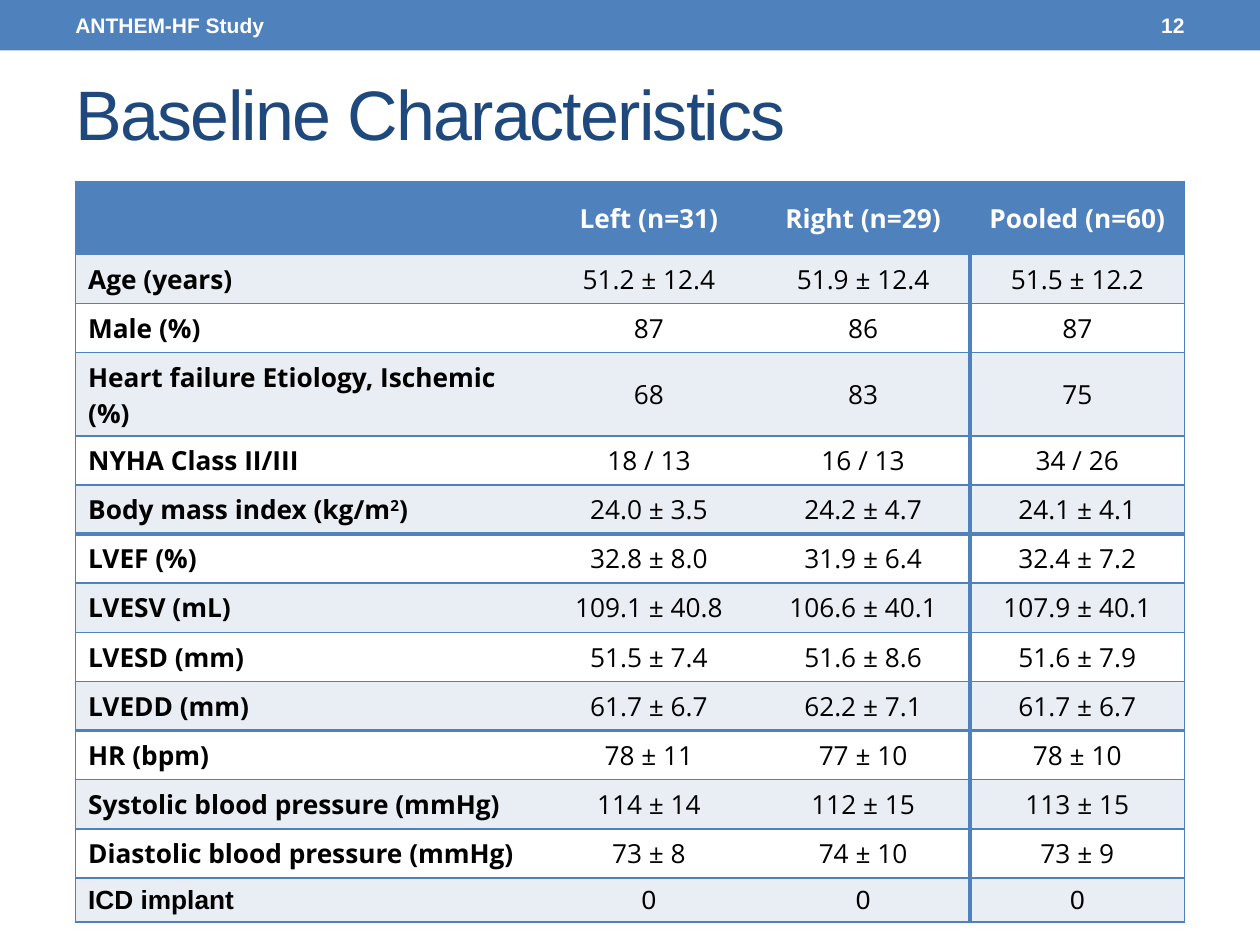
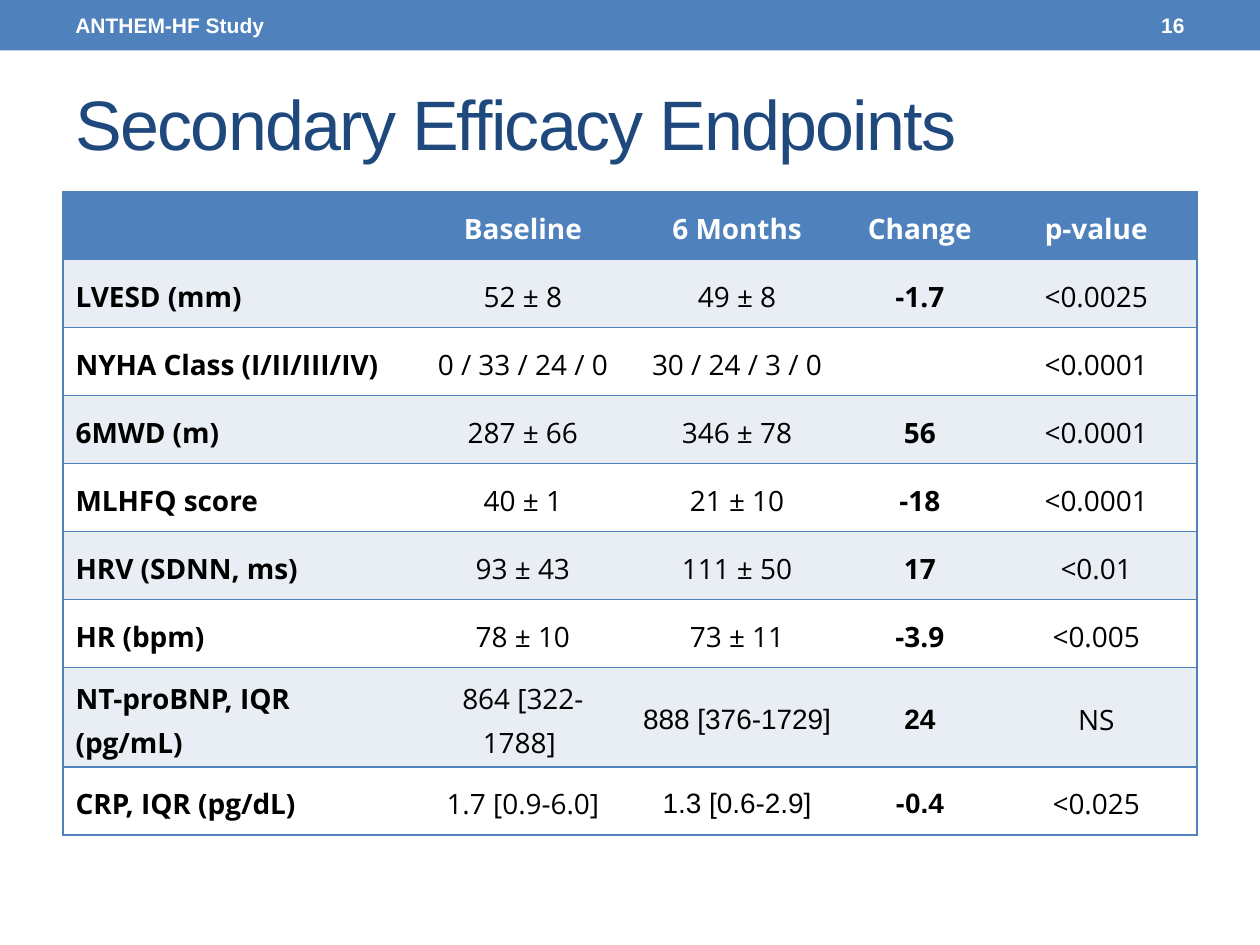
from dataclasses import dataclass

from lxml import etree
from pptx import Presentation
from pptx.dml.color import RGBColor
from pptx.enum import shapes, text
from pptx.oxml import ns
from pptx.util import Inches, Pt


@dataclass(frozen=True)
class Theme:
    blue: str = "4F81BD"
    navy: str = "1F497D"
    stripe: str = "E9EDF4"
    white: str = "FFFFFF"
    black: str = "000000"
    sans: str = "Arial"
    table_font: str = "Open Sans"
    title_size: int = 40
    band_size: int = 12
    thin: float = 1
    thick: float = 2.25


T = Theme()
STUDY = "ANTHEM-HF Study"

SLIDES = [
    dict(
        title="Baseline Characteristics", number=12,
        title_box=(0.5, 0.46, 9, 0.88), table_at=(0.6, 1.44),
        columns=[3.7, 1.7, 1.7, 1.7], row_height=0.39,
        special_heights={0: 0.58, 3: 0.66, 13: 0.33},
        size=15, spacing=None, header_inset=0.15,
        bold_columns={0}, thick_after_column=2, thick_below_rows={5, 9},
        arial_cells={(13, c) for c in range(4)},
        rows=[
            ("", "Left (n=31)", "Right (n=29)", "Pooled (n=60)"),
            ("Age (years)", "51.2 ± 12.4", "51.9 ± 12.4", "51.5 ± 12.2"),
            ("Male (%)", "87", "86", "87"),
            ("Heart failure Etiology, Ischemic (%)", "68", "83", "75"),
            ("NYHA Class II/III", "18 / 13", "16 / 13", "34 / 26"),
            ("Body mass index (kg/m^2^)", "24.0 ± 3.5", "24.2 ± 4.7", "24.1 ± 4.1"),
            ("LVEF (%)", "32.8 ± 8.0", "31.9 ± 6.4", "32.4 ± 7.2"),
            ("LVESV (mL)", "109.1 ± 40.8", "106.6 ± 40.1", "107.9 ± 40.1"),
            ("LVESD (mm)", "51.5 ± 7.4", "51.6 ± 8.6", "51.6 ± 7.9"),
            ("LVEDD (mm)", "61.7 ± 6.7", "62.2 ± 7.1", "61.7 ± 6.7"),
            ("HR (bpm)", "78 ± 11", "77 ± 10", "78 ± 10"),
            ("Systolic blood pressure (mmHg)", "114 ± 14", "112 ± 15", "113 ± 15"),
            ("Diastolic blood pressure (mmHg)", "73 ± 8", "74 ± 10", "73 ± 9"),
            ("ICD implant", "0", "0", "0"),
        ],
    ),
    dict(
        title="Secondary Efficacy Endpoints", number=16,
        title_box=(0.5, 0.54, 9, 0.92), table_at=(0.5, 1.52),
        columns=[2.8, 1.7, 1.7, 1.2, 1.6], row_height=0.54,
        special_heights={7: 0.79},
        size=16, spacing=1.15, header_inset=None,
        bold_columns={0, 3}, thick_after_column=None, thick_below_rows=set(),
        arial_cells={(r, c) for r in (7, 8) for c in (2, 3)},
        rows=[
            ("", "Baseline", "6 Months", "Change", "p-value"),
            ("LVESD (mm)", "52 ± 8", "49 ± 8", "-1.7", "<0.0025"),
            ("NYHA Class (I/II/III/IV)", "0 / 33 / 24 / 0", "30 / 24 / 3 / 0", "", "<0.0001"),
            ("6MWD (m)", "287 ± 66", "346 ± 78", "56", "<0.0001"),
            ("MLHFQ score", "40 ± 1", "21 ± 10", "-18", "<0.0001"),
            ("HRV (SDNN, ms)", "93 ± 43", "111 ± 50", "17", "<0.01"),
            ("HR (bpm)", "78 ± 10", "73 ± 11", "-3.9", "<0.005"),
            ("NT-proBNP, IQR (pg/mL)", "864 [322-1788] ", "888 [376-1729]", "24", "NS"),
            ("CRP, IQR (pg/dL)", "1.7 [0.9-6.0]", "1.3 [0.6-2.9]", "-0.4", "<0.025"),
        ],
    ),
]


def inches(values):
    return [Inches(v) for v in values]


def rgb(color):
    return RGBColor.from_string(color)


def style(p, size, color, font=T.sans, bold=False, align=text.PP_ALIGN.LEFT):
    p.alignment = align
    p.font.name, p.font.size, p.font.bold = font, Pt(size), bold
    p.font.color.rgb = rgb(color)


def add_band(slide):
    sp = slide.shapes.add_shape(shapes.MSO_SHAPE.RECTANGLE, *inches((0, 0, 10, 0.4)))
    sp.shadow.inherit = False
    sp.fill.solid()
    sp.fill.fore_color.rgb = rgb(T.blue)
    sp.line.fill.background()


def add_band_text(slide, content, left, width, align):
    tf = slide.shapes.add_textbox(*inches((left, 0.02, width, 0.36))).text_frame
    tf.word_wrap = True
    tf.vertical_anchor = text.MSO_ANCHOR.MIDDLE
    p = tf.paragraphs[0]
    p.text = content
    style(p, T.band_size, T.white, bold=True, align=align)


def set_title(slide, content, box):
    sp = slide.shapes.title
    sp.left, sp.top, sp.width, sp.height = inches(box)
    tf = sp.text_frame
    tf.auto_size = text.MSO_AUTO_SIZE.NONE
    tf.vertical_anchor = text.MSO_ANCHOR.TOP
    tf.margin_top = Inches(0.1)
    p = tf.paragraphs[0]
    p.text = content
    style(p, T.title_size, T.navy)
    p.runs[0]._r.get_or_add_rPr().set("spc", "-100")


def set_borders(cell, widths):
    tc_pr = cell._tc.get_or_add_tcPr()
    for i, (side, width) in enumerate(widths.items()):
        ln = etree.Element(ns.qn(f"a:ln{side}"), w=str(Pt(width)))
        if width:
            fill = etree.SubElement(ln, ns.qn("a:solidFill"))
            etree.SubElement(fill, ns.qn("a:srgbClr"), val=T.blue)
        else:
            etree.SubElement(ln, ns.qn("a:noFill"))
        tc_pr.insert(i, ln)


def fill_cell(cell, content, r, c, data):
    header = r == 0
    cell.vertical_anchor = text.MSO_ANCHOR.MIDDLE
    cell.fill.solid()
    cell.fill.fore_color.rgb = rgb(T.blue if header else T.stripe if r % 2 else T.white)

    def vertical(edge):
        if edge in (0, len(data["columns"])):
            return T.thin
        heavy = data["thick_after_column"]
        return T.thick if not header and heavy is not None and edge == heavy + 1 else 0

    def horizontal(row_above):
        return T.thick if row_above in data["thick_below_rows"] else T.thin

    set_borders(cell, {"L": vertical(c), "R": vertical(c + 1),
                       "T": horizontal(r - 1), "B": horizontal(r)})
    if not content:
        return
    if header and data["header_inset"]:
        inset = Inches(data["header_inset"])
        cell.margin_left = cell.margin_right = inset
        cell.margin_top = cell.margin_bottom = inset
    p = cell.text_frame.paragraphs[0]
    for i, part in enumerate(content.split("^")):
        run = p.add_run()
        run.text = part
        if i % 2:
            run._r.get_or_add_rPr().set("baseline", "30000")
    if data["spacing"]:
        p.line_spacing = data["spacing"]
    style(p, data["size"], T.white if header else T.black,
          font=T.sans if (r, c) in data["arial_cells"] else T.table_font,
          bold=header or c in data["bold_columns"],
          align=text.PP_ALIGN.CENTER if c else text.PP_ALIGN.LEFT)


def add_data_table(slide, data):
    rows, columns = data["rows"], data["columns"]
    heights = [data["special_heights"].get(r, data["row_height"]) for r in range(len(rows))]
    table = slide.shapes.add_table(
        len(rows), len(columns),
        *inches((*data["table_at"], sum(columns), sum(heights)))).table
    table.horz_banding = False
    for column, width in zip(table.columns, columns):
        column.width = Inches(width)
    for r, (row, height) in enumerate(zip(rows, heights)):
        table.rows[r].height = Inches(height)
        for c, content in enumerate(row):
            fill_cell(table.cell(r, c), content, r, c, data)


def main():
    prs = Presentation()
    prs.slide_width, prs.slide_height = inches((10, 7.5))
    for data in SLIDES:
        slide = prs.slides.add_slide(prs.slide_layouts[5])
        add_band(slide)
        set_title(slide, data["title"], data["title_box"])
        add_band_text(slide, str(data["number"]), 8.33, 1.17, text.PP_ALIGN.RIGHT)
        add_data_table(slide, data)
        add_band_text(slide, STUDY, 0.5, 3.17, text.PP_ALIGN.LEFT)
    prs.save("out.pptx")


if __name__ == "__main__":
    main()
